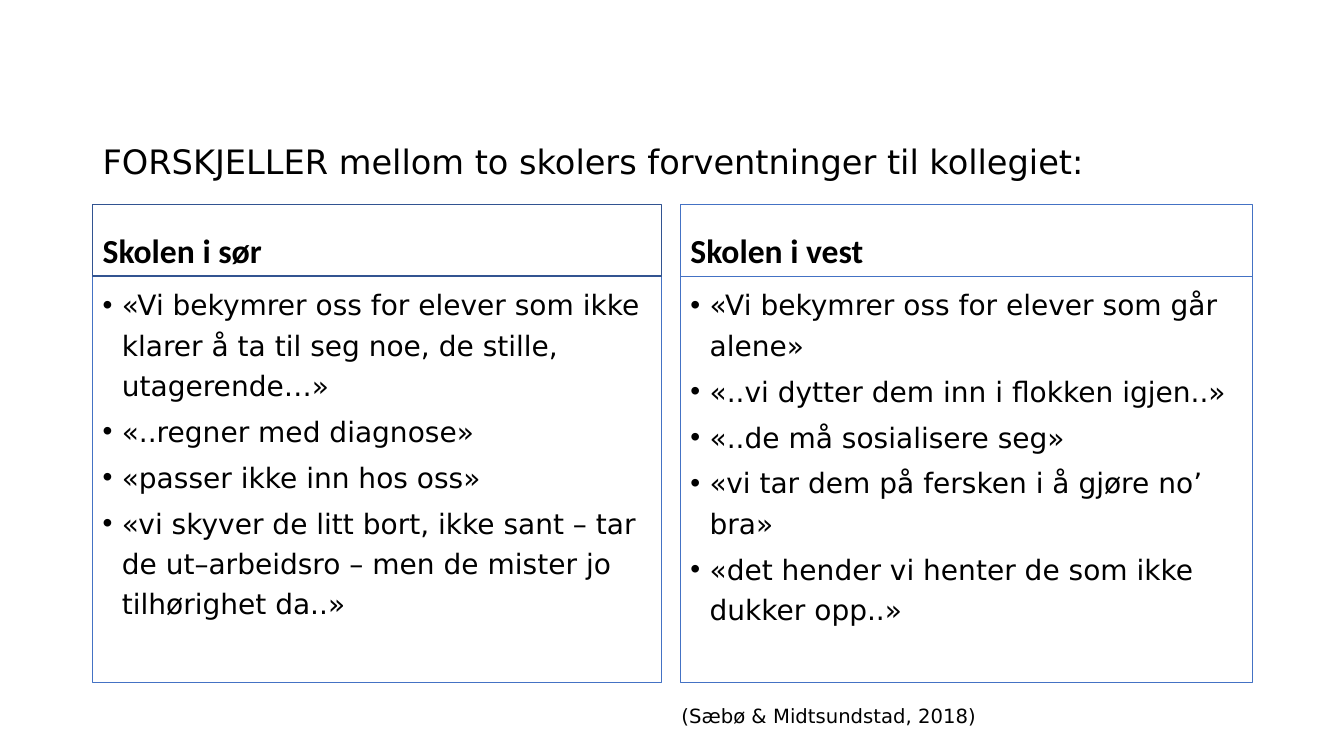
import pptx
import pptx.util
import pptx.dml.color
import pptx.enum.shapes
import pptx.enum.text
from dataclasses import dataclass
from lxml import etree

Inches = pptx.util.Inches
Pt = pptx.util.Pt
Anchor = pptx.enum.text.MSO_ANCHOR
Align = pptx.enum.text.PP_ALIGN


@dataclass(frozen=True)
class Theme:
    ink: str = "000000"
    blue: str = "4472C4"
    navy: str = "325491"
    sans: str = "DejaVu Sans"
    head: str = "Calibri"
    large: int = 24
    body: int = 20
    small: int = 14


THEME = Theme()

TITLE = "FORSKJELLER mellom to skolers forventninger til kollegiet:"
SOURCE = "(Sæbø & Midtsundstad, 2018)"
SOUTH = [
    "«Vi bekymrer oss for elever som ikke klarer å ta til seg noe, "
    "de stille, utagerende…»",
    "«..regner med diagnose»",
    "«passer ikke inn hos oss»",
    "«vi skyver de litt bort, ikke sant – tar de ut–arbeidsro – "
    "men de mister jo tilhørighet da..»",
]
WEST = [
    "«Vi bekymrer oss for elever som går alene»",
    "«..vi dytter dem inn i flokken igjen..»",
    "«..de må sosialisere seg»",
    "«vi tar dem på fersken i å gjøre no’ bra»",
    "«det hender vi henter de som ikke dukker opp..»",
]


def color(code):
    return pptx.dml.color.RGBColor.from_string(code)


def apply(item, form):
    for name, value in form.items():
        setattr(item, name, value)


def set_frame(frame, anchor=Anchor.TOP):
    apply(frame, {
        "word_wrap": True, "vertical_anchor": anchor,
        "margin_left": Inches(0.1), "margin_right": Inches(0.1),
        "margin_top": Inches(0.05), "margin_bottom": Inches(0.05),
    })


def write(para, text, size, face=THEME.sans, bold=False, **form):
    run = para.add_run()
    run.text = text
    apply(run.font, {"size": Pt(size), "name": face, "bold": bold})
    run.font.color.rgb = color(THEME.ink)
    apply(para, {"alignment": Align.LEFT, **form})


def add_text(slide, box, text, size, anchor=Anchor.TOP, **form):
    frame = slide.shapes.add_textbox(*map(Inches, box)).text_frame
    set_frame(frame, anchor)
    write(frame.paragraphs[0], text, size, **form)


def add_box(slide, box, edge, width):
    kind = pptx.enum.shapes.MSO_SHAPE.RECTANGLE
    shape = slide.shapes.add_shape(kind, *map(Inches, box))
    shape.shadow.inherit = False
    shape.fill.background()
    shape.line.color.rgb = color(edge)
    shape.line.width = Pt(width)
    return shape


def add_bullet(para):
    props = para._p.get_or_add_pPr()
    indent = Inches(0.19)
    props.set("marL", str(indent))
    props.set("indent", str(-indent))
    space = pptx.oxml.ns.qn
    tint = etree.SubElement(props, space("a:buClr"))
    etree.SubElement(tint, space("a:srgbClr"), val=THEME.ink)
    etree.SubElement(props, space("a:buFont"), typeface="Arial")
    etree.SubElement(props, space("a:buChar"), char="•")


def add_list(slide, box, quotes):
    frame = add_box(slide, box, THEME.blue, 0.75).text_frame
    set_frame(frame)
    for count, quote in enumerate(quotes):
        para = frame.add_paragraph() if count else frame.paragraphs[0]
        write(para, quote, THEME.body, line_spacing=1.2,
              space_before=Pt(4 if count else 0))
        add_bullet(para)


def add_school(slide, left, width, name, quotes, edge, weight):
    add_text(slide, (left, 1.84, width, 0.9), name, THEME.large, Anchor.BOTTOM,
             face=THEME.head, bold=True, line_spacing=0.9)
    add_list(slide, (left, 2.74, width, 4.03), quotes)
    add_box(slide, (left, 2.03, width, 0.71), edge, weight)


def main():
    deck = pptx.Presentation()
    apply(deck, {"slide_width": Inches(13.33), "slide_height": Inches(7.5)})
    slide = deck.slides.add_slide(deck.slide_layouts[6])

    # Title
    add_text(slide, (0.92, 0.4, 11.5, 1.45), TITLE, THEME.large, Anchor.BOTTOM)

    # The two schools side by side
    add_school(slide, 0.92, 5.64, "Skolen i sør", SOUTH, THEME.navy, 1)
    add_school(slide, 6.75, 5.67, "Skolen i vest", WEST, THEME.blue, 0.75)

    # Reference
    add_text(slide, (6.66, 6.93, 4.75, 0.57), SOURCE, THEME.small)

    deck.save("out.pptx")


if __name__ == "__main__":
    main()
